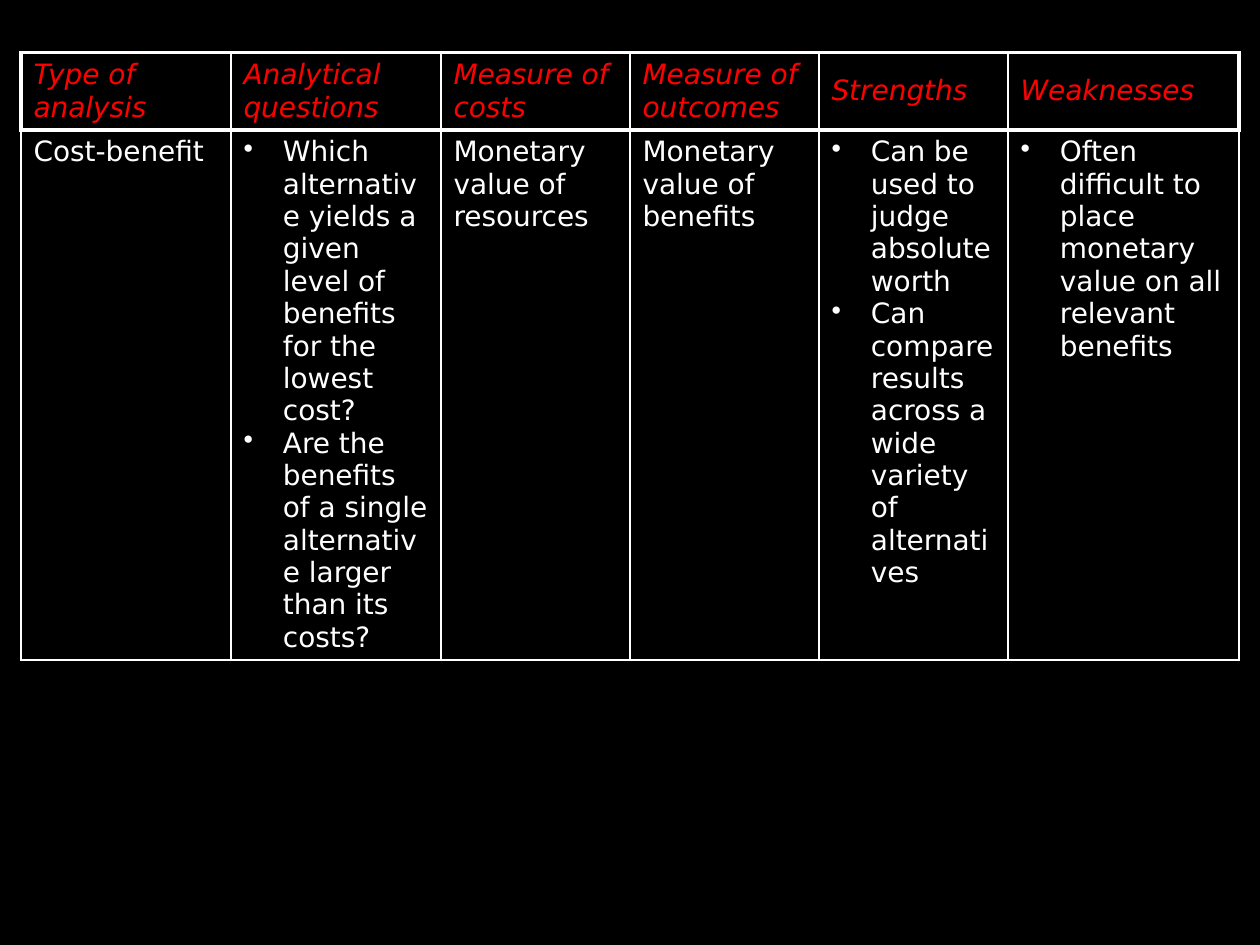
from lxml.etree import SubElement
from pptx import Presentation
from pptx.dml.color import RGBColor
from pptx.enum.text import MSO_ANCHOR
from pptx.oxml import parse_xml
from pptx.oxml.ns import nsdecls, qn
from pptx.util import Pt

FONT = "DejaVu Sans"
BLACK, WHITE, RED = "000000", "FFFFFF", "FF0000"
THIN, THICK = 1, 2.25
BULLET_INDENT = 22.5
COLUMN_WIDTHS = [120, 120, 108, 108, 108, 132]
ROW_HEIGHT = 29.5
HEADINGS = ["Type of analysis", "Analytical questions", "Measure of costs",
            "Measure of outcomes", "Strengths", "Weaknesses"]
COST_BENEFIT = [
    "Cost-benefit",
    ["Which alternative yields a given level of benefits for the lowest cost?",
     "Are the benefits of a single alternative larger than its costs?"],
    "Monetary value of resources",
    "Monetary value of benefits",
    ["Can be used to judge absolute worth",
     "Can compare results across a wide variety of alternatives"],
    ["Often difficult to place monetary value on all relevant benefits"],
]


def color(value):
    return RGBColor.from_string(value)


def add_bullet(paragraph):
    properties = paragraph._p.get_or_add_pPr()
    properties.set("marL", str(Pt(BULLET_INDENT)))
    properties.set("indent", str(-Pt(BULLET_INDENT)))
    SubElement(properties, qn("a:buFontTx"))
    SubElement(properties, qn("a:buChar")).set("char", "•")


def set_borders(cell, left, right, top, bottom):
    properties = cell._tc.get_or_add_tcPr()
    sides = {"L": left, "R": right, "T": top, "B": bottom}
    for position, (side, width) in enumerate(sides.items()):
        border = parse_xml(
            f'<a:ln{side} {nsdecls("a")} w="{Pt(width)}"><a:solidFill>'
            f'<a:srgbClr val="{WHITE}"/></a:solidFill></a:ln{side}>')
        properties.insert(position, border)


def fill_cell(cell, content, text_color, italic):
    cell.fill.background()
    bulleted = isinstance(content, list)
    lines = content if bulleted else [content]
    cell.text_frame.text = "\n".join(lines)
    for paragraph in cell.text_frame.paragraphs:
        paragraph.font.name = FONT
        paragraph.font.size = Pt(16)
        paragraph.font.italic = italic
        paragraph.font.color.rgb = color(text_color)
        if bulleted:
            add_bullet(paragraph)


def add_analysis_table(slide, left, top, width, height):
    frame = slide.shapes.add_table(2, len(HEADINGS), Pt(left), Pt(top),
                                   Pt(width), Pt(height))
    analysis = frame.table
    analysis.first_row = False
    analysis.horz_banding = False
    for column, column_width in zip(analysis.columns, COLUMN_WIDTHS):
        column.width = Pt(column_width)
    for row in analysis.rows:
        row.height = Pt(ROW_HEIGHT)
    frame.height = Pt(height)

    last = len(HEADINGS) - 1
    for index, (heading, detail) in enumerate(zip(HEADINGS, COST_BENEFIT)):
        header_cell, detail_cell = analysis.cell(0, index), analysis.cell(1, index)
        fill_cell(header_cell, heading, RED, True)
        header_cell.vertical_anchor = MSO_ANCHOR.MIDDLE
        set_borders(header_cell, THICK if index == 0 else THIN,
                    THICK if index == last else THIN, THICK, THICK)
        fill_cell(detail_cell, detail, WHITE, False)
        set_borders(detail_cell, THIN, THIN, THICK, THIN)


def main():
    presentation = Presentation()
    presentation.slide_width = Pt(720)
    presentation.slide_height = Pt(540)
    slide = presentation.slides.add_slide(presentation.slide_layouts[6])
    slide.background.fill.solid()
    slide.background.fill.fore_color.rgb = color(BLACK)
    add_analysis_table(slide, 12, 30, sum(COLUMN_WIDTHS), 360)
    presentation.save("out.pptx")


if __name__ == "__main__":
    main()
